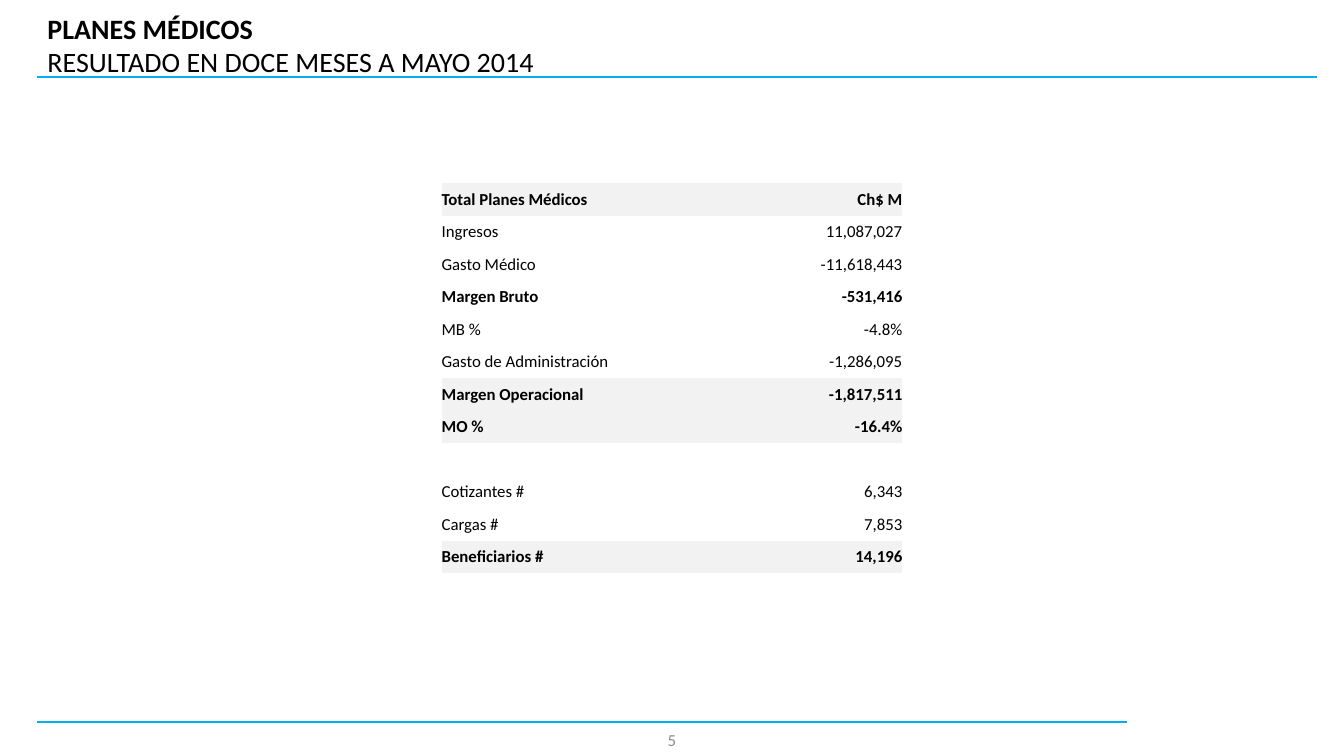
from pptx import Presentation
from pptx.dml.color import RGBColor
from pptx.enum import shapes, text
from pptx.oxml.ns import qn
from pptx.util import Inches, Pt
from lxml import etree

BLACK = RGBColor(0x00, 0x00, 0x00)
GREY = RGBColor(0x8C, 0x8C, 0x8C)
BAND = RGBColor(0xF2, 0xF2, 0xF2)
CYAN = RGBColor(0x00, 0xB0, 0xF0)
NO_STYLE_NO_GRID = "{2D5ABB26-0587-4C30-8999-92F81FD0307C}"


def format_run(r, size, color, bold=False):
    r.font.name = "Calibri"
    r.font.size = Pt(size)
    r.font.color.rgb = color
    r.font.bold = bold


prs = Presentation()
prs.slide_width = Inches(13.33)
prs.slide_height = Inches(7.5)
s = prs.slides.add_slide(prs.slide_layouts[5])

for right, y in [(11.18, 7.16), (13.06, 0.76)]:
    rule = s.shapes.add_connector(
        shapes.MSO_CONNECTOR.STRAIGHT, Inches(0.37), Inches(y), Inches(right), Inches(y))
    rule.line.color.rgb = CYAN
    rule.line.width = Pt(1.5)
    etree.SubElement(rule.element.spPr, qn("a:effectLst"))

title = s.shapes.title
title.left, title.top = Inches(0.37), Inches(0.13)
title.width, title.height = Inches(12.3), Inches(0.63)
tf = title.text_frame
tf.text = "PLANES MÉDICOS\vRESULTADO EN DOCE MESES A MAYO 2014"
tf.auto_size = text.MSO_AUTO_SIZE.NONE
tf.vertical_anchor = text.MSO_ANCHOR.MIDDLE
p = tf.paragraphs[0]
p.alignment = text.PP_ALIGN.LEFT
for r, bold in zip(p.runs, [True, False]):
    format_run(r, 20, BLACK, bold)

number = s.shapes.add_textbox(Inches(5.11), Inches(7.14), Inches(3.11), Inches(0.4))
tf = number.text_frame
tf.word_wrap = True
tf.text = "5"
tf.vertical_anchor = text.MSO_ANCHOR.MIDDLE
p = tf.paragraphs[0]
p.alignment = text.PP_ALIGN.CENTER
format_run(p.runs[0], 12, GREY)

rows = [
    ("Total Planes Médicos", "Ch$ M", True, True),
    ("Ingresos", "11,087,027", False, False),
    ("Gasto Médico", "-11,618,443", False, False),
    ("Margen Bruto", "-531,416", True, False),
    ("MB %", "-4.8%", False, False),
    ("Gasto de Administración", "-1,286,095", False, False),
    ("Margen Operacional", "-1,817,511", True, True),
    ("MO %", "-16.4%", True, True),
    ("", "", False, False),
    ("Cotizantes #", "6,343", False, False),
    ("Cargas #", "7,853", False, False),
    ("Beneficiarios #", "14,196", True, True),
]
frame = s.shapes.add_table(
    len(rows), 2, Inches(4.38), Inches(1.82), Inches(4.57), Inches(3.87))
for style in frame.element.iter(qn("a:tableStyleId")):
    style.text = NO_STYLE_NO_GRID
table = frame.table
table.first_row = False
table.horz_banding = False
table.columns[0].width = Inches(3.04)
table.columns[1].width = Inches(1.53)

for i, (label, value, bold, shaded) in enumerate(rows):
    for j, content in enumerate([label, value]):
        cell = table.cell(i, j)
        cell.margin_left = cell.margin_right = 0
        cell.margin_top = cell.margin_bottom = 0
        cell.vertical_anchor = text.MSO_ANCHOR.MIDDLE
        if shaded:
            cell.fill.solid()
            cell.fill.fore_color.rgb = BAND
        else:
            cell.fill.background()
        cell.text_frame.text = content
        p = cell.text_frame.paragraphs[0]
        p.alignment = text.PP_ALIGN.RIGHT if j else text.PP_ALIGN.LEFT
        for r in p.runs:
            format_run(r, 12, BLACK, bold)

prs.save("out.pptx")
